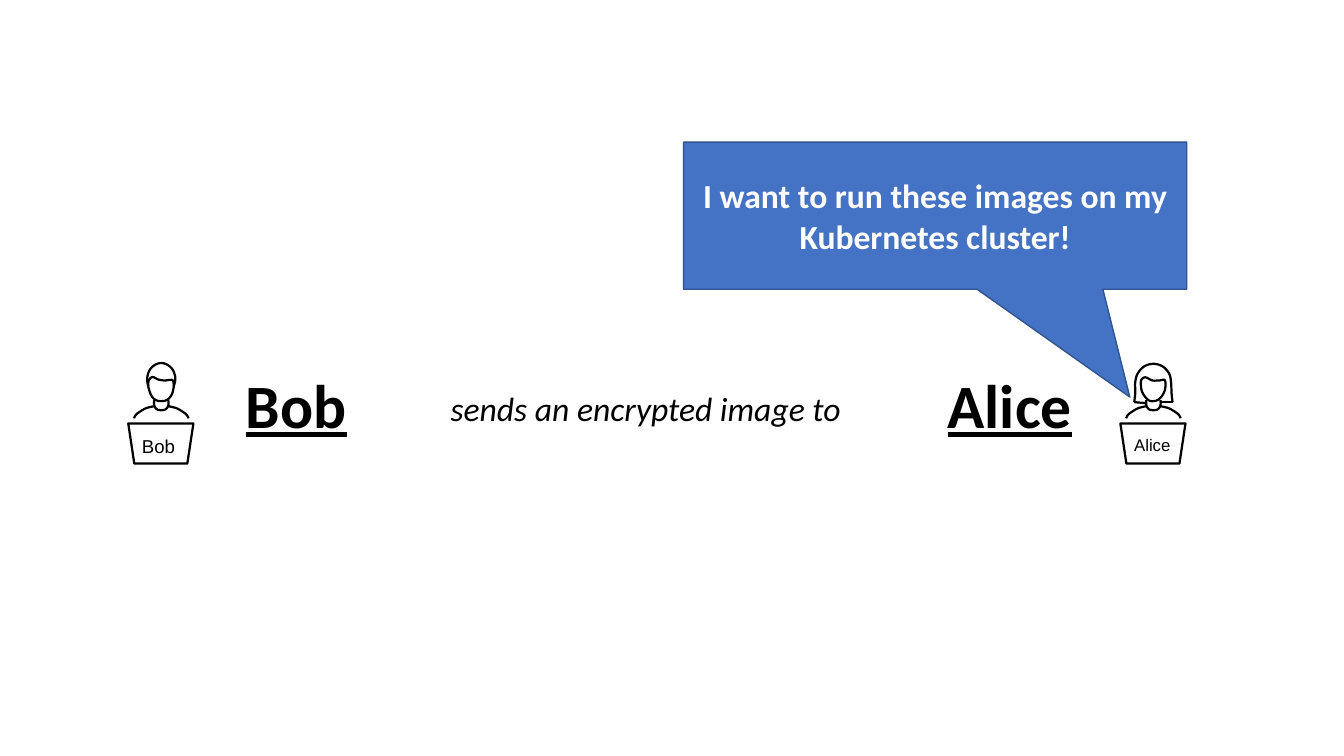
from dataclasses import dataclass

from pptx import Presentation
from pptx.dml.color import RGBColor
from pptx.enum.shapes import MSO_SHAPE
from pptx.enum.text import MSO_ANCHOR, MSO_AUTO_SIZE, PP_ALIGN
from pptx.util import Inches, Pt

CALLOUT = MSO_SHAPE.RECTANGULAR_CALLOUT
MIDDLE = MSO_ANCHOR.MIDDLE
CENTER = PP_ALIGN.CENTER
LEFT = PP_ALIGN.LEFT
GROW = MSO_AUTO_SIZE.SHAPE_TO_FIT_TEXT


@dataclass(frozen=True)
class Theme:
    """Colours, fonts and sizes of the slide."""
    ink: RGBColor = RGBColor(0, 0, 0)
    paper: RGBColor = RGBColor(255, 255, 255)
    bubble: RGBColor = RGBColor(0x44, 0x72, 0xC4)
    bubble_edge: RGBColor = RGBColor(0x32, 0x54, 0x91)
    body_font: str = "Calibri"
    label_font: str = "Arial"
    name_size: float = 44
    phrase_size: float = 24
    stroke: float = 1.6


THEME = Theme()
SHOULDER = [(27, 44), (19, 46), (12, 50), (8.5, 53), (7, 56)]
BODY = [
    SHOULDER,
    [(68 - x, y) for x, y in SHOULDER],
    [(27, 38), (27, 43), (29.5, 47), (34, 48), (38.5, 47), (41, 43), (41, 38)],
]
BOB = BODY + [
    [(21, 24), (20, 17), (22, 9), (27, 3.5), (34, 1.2), (41, 3.5),
     (46, 9), (48, 17), (46.5, 24)],
    [(21, 24), (23, 31), (26, 36), (30, 38.5), (34, 39), (38, 38.5),
     (42, 36), (45, 31), (46.5, 24)],
    [(21, 24), (21.5, 19), (24, 15.5), (27, 15.5), (31, 17.5), (37, 18.5),
     (42, 18), (45.5, 18.5), (46.5, 24)],
]
ALICE = BODY + [
    [(15, 40), (16, 31), (16, 20), (18.5, 11.5), (25, 4.5), (34, 2),
     (43, 4.5), (49.5, 11.5), (51.5, 20), (52, 31), (53, 40)],
    [(21.5, 22), (22, 18), (25, 15.5), (28, 16), (33, 18.5), (40, 18.5),
     (45, 18), (46, 23), (45, 29), (42, 34.5), (38, 38), (34, 39),
     (30, 38.5), (26, 35), (22.5, 29), (21.5, 22)],
    [(15, 40), (27, 41)],
    [(41, 40), (53, 40)],
]
LAPTOP = [(1.2, 61.1), (65.8, 61.1), (59.8, 100.9), (7.2, 100.9), (1.2, 61.1)]


def write_text(shape, text, size, font=THEME.body_font, color=THEME.ink,
               bold=False, italic=False, underline=False, align=LEFT):
    """Put one formatted paragraph into a shape."""
    para = shape.text_frame.paragraphs[0]
    para.alignment = align
    span = para.add_run()
    span.text = text
    span.font.name = font
    span.font.size = Pt(size)
    span.font.color.rgb = color
    span.font.bold = bold
    span.font.italic = italic
    span.font.underline = underline


def add_phrase(page, box, text, size, **style):
    """Add an unwrapped text box that grows with its text."""
    phrase = page.shapes.add_textbox(*map(Inches, box))
    phrase.text_frame.word_wrap = False
    phrase.text_frame.auto_size = GROW
    write_text(phrase, text, size, **style)


def smooth(points, steps=6):
    """Return a smooth curve through the points."""
    padded = [points[0], *points, points[-1]]
    curve = [points[0]]
    for before, start, end, after in zip(padded, padded[1:], padded[2:], padded[3:]):
        for step in range(1, steps + 1):
            t = step / steps
            curve.append(tuple(
                (2 * b + (c - a) * t + (2 * a - 5 * b + 4 * c - d) * t ** 2
                 + (3 * b - a - 3 * c + d) * t ** 3) / 2
                for a, b, c, d in zip(before, start, end, after)))
    return curve


def draw_strokes(page, left, top, strokes):
    """Draw strokes, given in hundredths of an inch, as one outline."""
    placed = [[(Inches(left + x / 100), Inches(top + y / 100)) for x, y in stroke]
              for stroke in strokes]
    builder = page.shapes.build_freeform(*placed[0][0])
    for index, stroke in enumerate(placed):
        if index:
            builder.move_to(*stroke[0])
        builder.add_line_segments(stroke[1:], close=stroke[0] == stroke[-1])
    outline = builder.convert_to_shape()
    outline.shadow.inherit = False
    outline.fill.background()
    outline.line.color.rgb = THEME.ink
    outline.line.width = Pt(THEME.stroke)


def add_person(page, left, top, figure, name, size):
    """Add a person behind a laptop that bears the name."""
    draw_strokes(page, left, top, [smooth(stroke) for stroke in figure])
    draw_strokes(page, left, top, [LAPTOP])
    label = page.shapes.add_textbox(
        Inches(left + 0.05), Inches(top + 0.62), Inches(0.57), Inches(0.39))
    frame = label.text_frame
    frame.word_wrap = False
    frame.margin_left = frame.margin_right = Inches(0.1)
    frame.margin_top = frame.margin_bottom = Inches(0.1)
    write_text(label, name, size, font=THEME.label_font)


def add_bubble(page, box, text):
    """Add the speech bubble with its tail at lower right."""
    bubble = page.shapes.add_shape(CALLOUT, *map(Inches, box))
    bubble.adjustments[0] = 0.387
    bubble.adjustments[1] = 1.233
    bubble.shadow.inherit = False
    bubble.fill.solid()
    bubble.fill.fore_color.rgb = THEME.bubble
    bubble.line.color.rgb = THEME.bubble_edge
    bubble.line.width = Pt(1)
    bubble.text_frame.word_wrap = True
    bubble.text_frame.vertical_anchor = MIDDLE
    write_text(bubble, text, THEME.phrase_size, color=THEME.paper,
               bold=True, align=CENTER)


def main():
    """Build and save the slide."""
    deck = Presentation()
    deck.slide_width = Inches(13.33)
    deck.slide_height = Inches(7.5)
    page = deck.slides.add_slide(deck.slide_layouts[6])
    row = 3.59
    for name, left, width in (("Bob", 2.34, 1.21), ("Alice", 9.3, 1.44)):
        add_phrase(page, (left, row, width, 0.84), name, THEME.name_size,
                   bold=True, underline=True)
    add_phrase(page, (4.37, 3.8, 4.11, 0.5), "sends an encrypted image to",
               THEME.phrase_size, italic=True)
    add_person(page, 1.26, row, BOB, "Bob", 13.3)
    add_person(page, 11.1, row, ALICE, "Alice", 12)
    add_bubble(page, (6.78, 1.41, 4.99, 1.46),
               "I want to run these images on my Kubernetes cluster!")
    deck.save("out.pptx")


if __name__ == "__main__":
    main()
